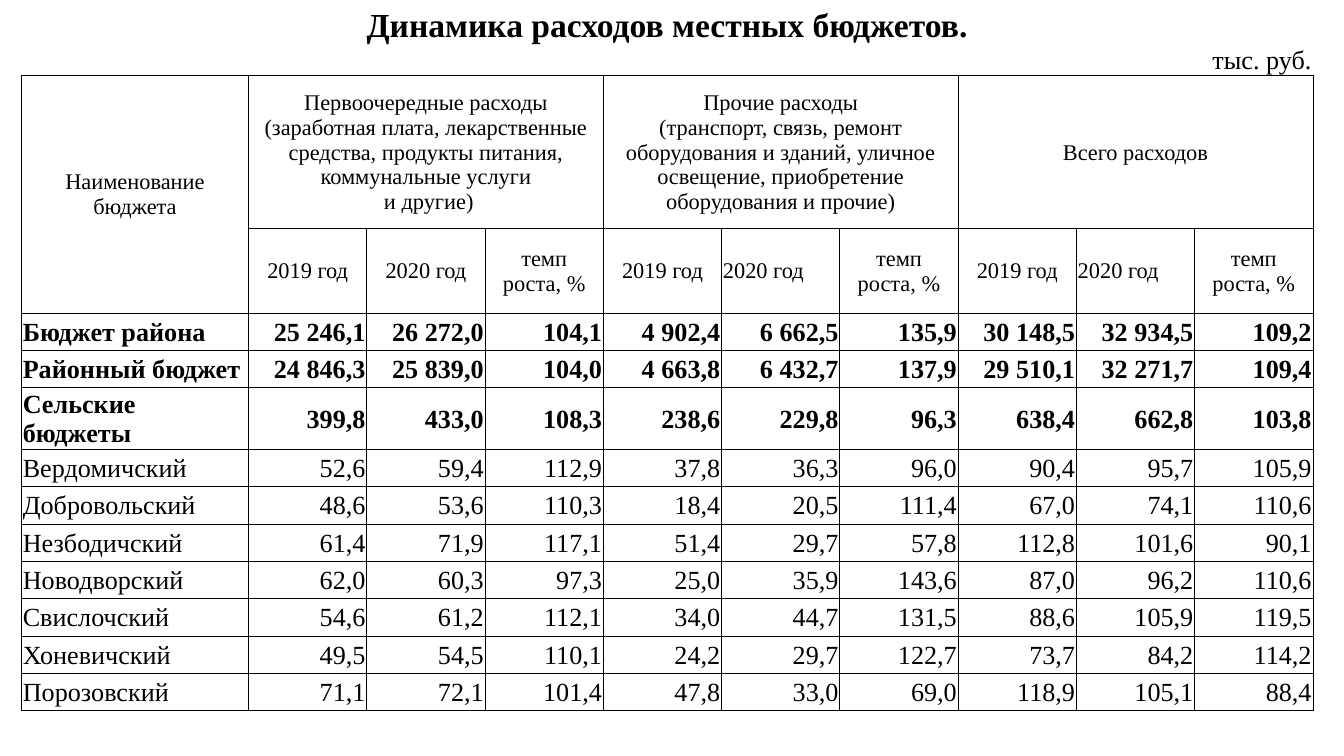
from dataclasses import dataclass

from lxml.etree import SubElement
from pptx import Presentation
from pptx.dml.color import RGBColor
from pptx.enum.text import MSO_ANCHOR as Anchor, PP_ALIGN as Align
from pptx.oxml.ns import qn
from pptx.util import Inches, Pt


@dataclass(frozen=True)
class Theme:
    font: str = "Times New Roman"
    ink: str = "000000"
    title: int = 18
    body: int = 14
    head: int = 12
    line: float = 0.5


THEME = Theme()
THIN = 20 / 72  # a one-line row is 20 points high
COLS = [1.69] + [0.88] * 9
ROWS = [0.3, 0.23, 1.14, 0.63] + [THIN] * 2 + [0.46] + [THIN] * 7
HEAD, DATA = 2, 4  # first header row, first row of figures
BOLD = 3  # number of summary rows

GROUPS = [
    "Первоочередные расходы (заработная плата, лекарственные средства, "
    "продукты питания, коммунальные услуги\n и другие)",
    "Прочие расходы\n(транспорт, связь, ремонт оборудования и зданий, "
    "уличное освещение, приобретение оборудования и прочие)",
    "Всего расходов",
]
YEARS = ["2019 год", "2020 год", "темп\nроста, %"]
BUDGETS = """
Бюджет района|25 246,1|26 272,0|104,1|4 902,4|6 662,5|135,9|30 148,5|32 934,5|109,2
Районный бюджет|24 846,3|25 839,0|104,0|4 663,8|6 432,7|137,9|29 510,1|32 271,7|109,4
Сельские бюджеты|399,8|433,0|108,3|238,6|229,8|96,3|638,4|662,8|103,8
Вердомичский|52,6|59,4|112,9|37,8|36,3|96,0|90,4|95,7|105,9
Добровольский|48,6|53,6|110,3|18,4|20,5|111,4|67,0|74,1|110,6
Незбодичский|61,4|71,9|117,1|51,4|29,7|57,8|112,8|101,6|90,1
Новодворский|62,0|60,3|97,3|25,0|35,9|143,6|87,0|96,2|110,6
Свислочский|54,6|61,2|112,1|34,0|44,7|131,5|88,6|105,9|119,5
Хоневичский|49,5|54,5|110,1|24,2|29,7|122,7|73,7|84,2|114,2
Порозовский|71,1|72,1|101,4|47,8|33,0|69,0|118,9|105,1|88,4
""".strip().splitlines()


def write(cell, text, size=THEME.body, bold=False, align=Align.CENTER,
          anchor=Anchor.MIDDLE):
    cell.vertical_anchor = anchor
    cell.text = text
    for para in cell.text_frame.paragraphs:
        para.alignment = align
        for run in para.runs:
            font = run.font
            font.name, font.size, font.bold = THEME.font, Pt(size), bold
            font.color.rgb = RGBColor.from_string(THEME.ink)


def rule(cell, sides):
    """Draw the named sides of a cell and clear the others."""
    props = cell._tc.get_or_add_tcPr()
    for side in "LRTB":
        line = SubElement(props, qn(f"a:ln{side}"), w=str(Pt(THEME.line)))
        if side in sides:
            fill = SubElement(line, qn("a:solidFill"))
            SubElement(fill, qn("a:srgbClr"), val=THEME.ink)
        else:
            SubElement(line, qn("a:noFill"))


def prepare(table):
    """Set the grid, margins, borders and empty-cell text size."""
    table.first_row = table.horz_banding = False
    for col, width in zip(table.columns, COLS):
        col.width = Inches(width)
    for r, height in enumerate(ROWS):
        table.rows[r].height = Inches(height)
        for cell in table.rows[r].cells:
            cell.margin_left = cell.margin_right = Inches(0.01)
            cell.margin_top, cell.margin_bottom = Inches(0.01), 0
            rule(cell, "LRTB" if r >= HEAD else "B" if r == HEAD - 1 else "")
            cell.fill.background()
            para = cell.text_frame.paragraphs[0]
            SubElement(para._p, qn("a:endParaRPr"), sz=str(THEME.head * 100))


def add_caption(table):
    table.cell(0, 0).merge(table.cell(0, 9))
    write(table.cell(0, 0), "Динамика расходов местных бюджетов.",
          size=THEME.title, bold=True, anchor=Anchor.BOTTOM)
    for c in (1, 3, 5):
        table.cell(1, c).merge(table.cell(1, c + 1))
    write(table.cell(1, 9), "тыс. руб.", align=Align.RIGHT,
          anchor=Anchor.BOTTOM)


def add_heads(table):
    table.cell(HEAD, 0).merge(table.cell(HEAD + 1, 0))
    write(table.cell(HEAD, 0), "Наименование бюджета", size=THEME.head)
    for g, group in enumerate(GROUPS):
        left = 1 + 3 * g
        table.cell(HEAD, left).merge(table.cell(HEAD, left + 2))
        write(table.cell(HEAD, left), group, size=THEME.head)
        for y, year in enumerate(YEARS):
            align = Align.LEFT if g and y == 1 else Align.CENTER
            write(table.cell(HEAD + 1, left + y), year, size=THEME.head,
                  align=align)


def add_figures(table):
    for r, budget in enumerate(BUDGETS):
        for c, text in enumerate(budget.split("|")):
            write(table.cell(DATA + r, c), text, bold=r < BOLD,
                  align=Align.RIGHT if c else Align.LEFT)


def add_budget(slide, left, top):
    box = [Inches(n) for n in (left, top, sum(COLS), sum(ROWS))]
    table = slide.shapes.add_table(len(ROWS), len(COLS), *box).table
    prepare(table)
    add_caption(table)
    add_heads(table)
    add_figures(table)


def main():
    deck = Presentation()
    deck.slide_width = Inches(10)
    deck.slide_height = deck.slide_width * 9 // 16
    slide = deck.slides.add_slide(deck.slide_layouts[6])
    add_budget(slide, 0.16, 0.03)
    deck.save("out.pptx")


if __name__ == "__main__":
    main()
